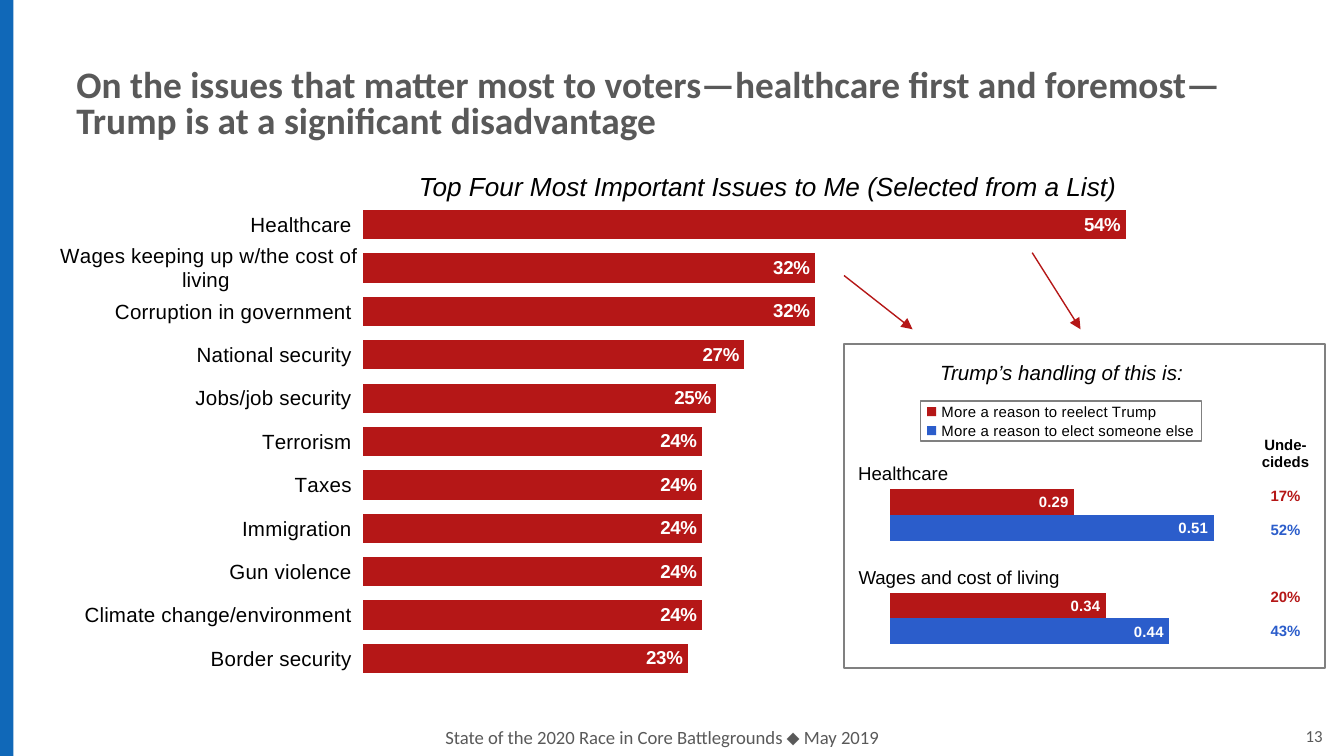
from lxml import etree
from pptx import Presentation
from pptx.chart.data import CategoryChartData as ChartData
from pptx.dml.color import RGBColor
from pptx.enum.chart import XL_CHART_TYPE as ChartType
from pptx.enum.chart import XL_LABEL_POSITION as LabelPosition
from pptx.enum.chart import XL_LEGEND_POSITION as LegendPosition
from pptx.enum.chart import XL_TICK_LABEL_POSITION as TickLabel
from pptx.enum.chart import XL_TICK_MARK as TickMark
from pptx.enum.shapes import MSO_CONNECTOR as Connector
from pptx.enum.shapes import MSO_SHAPE as Shape
from pptx.enum.text import MSO_ANCHOR as Anchor
from pptx.enum.text import PP_ALIGN as Align
from pptx.oxml import parse_xml
from pptx.oxml.ns import nsdecls, qn
from pptx.util import Inches, Pt

COLUMNS, ROWS, CELL = 100, 56.25, Inches(0.1)
COLORS = {
    "stripe": "1068B8", "heading": "595959", "text": "000000", "frame": "808080",
    "reelect": "B51717", "other": "2B5DCB", "label": "FFFFFF",
}
PLAIN_TABLE = "{2D5ABB26-0587-4C30-8999-92F81FD0307C}"

TITLE = ("On the issues that matter most to voters—healthcare first and foremost—"
         "Trump is at a significant disadvantage")
ISSUES = [
    ("Healthcare ", 0.54),
    ("Wages keeping up w/the cost of living ", 0.32),
    ("Corruption in government ", 0.32),
    ("National security ", 0.27),
    ("Jobs/job security ", 0.25),
    ("Terrorism ", 0.24),
    ("Taxes ", 0.24),
    ("Immigration ", 0.24),
    ("Gun violence ", 0.24),
    ("Climate change/environment ", 0.24),
    ("Border security ", 0.23),
]
HANDLING = [
    ("More a reason to elect someone else", [0.44, None, 0.51], "other"),
    ("More a reason to reelect Trump", [0.34, None, 0.29], "reelect"),
]
UNDECIDED = [
    ("Unde-\vcideds", "text"), ("17%", "reelect"), ("52%", "other"),
    ("", "text"), ("20%", "reelect"), ("43%", "other"),
]
TEXTS = [
    (TITLE, (4.7, 3.2, 90.7, 9.4), dict(
        size=20, font="Calibri", color="heading", bold=True, align=Align.LEFT,
        anchor=Anchor.MIDDLE, spacing=0.8, wrap=True)),
    ("State of the 2020 Race in Core Battlegrounds ⬥ May 2019", (16.5, 53.5, 65.5, 2.7),
     dict(size=10, font="Calibri", color="heading", wrap=True)),
    ("13", (93, 53.5, 6.4, 2.5),
     dict(size=9, font="Calibri", color="heading", align=Align.RIGHT, wrap=True)),
    ("Top Four Most Important Issues to Me (Selected from a List)",
     (30.1, 12.2, 54.1, 3.4), dict(size=14, italic=True)),
    ("Trump’s handling of this is:", (68.8, 26.3, 20.4, 2.9), dict(size=11, italic=True)),
    ("Healthcare", (62.8, 33.9, 8.8, 2.7), dict(size=10)),
    ("Wages and cost of living", (62.8, 41.6, 17.1, 2.7), dict(size=10)),
]
ARROWS = [(76.8, 18.8, 80.4, 24.5), (62.8, 20.5, 67.9, 24.5)]


def grid(*cells):
    return [round(cell * CELL) for cell in cells]


def rgb(name):
    return RGBColor.from_string(COLORS[name])


def style_font(font, size, color="text", bold=False, italic=False, name="Arial"):
    font.size, font.name, font.bold, font.italic = Pt(size), name, bold, italic
    font.color.rgb = rgb(color)


def write(frame, text, size=8, font="Arial", color="text", bold=False, italic=False,
          align=Align.CENTER, anchor=Anchor.TOP, spacing=None, wrap=False):
    frame.word_wrap = wrap
    frame.vertical_anchor = anchor
    paragraph = frame.paragraphs[0]
    paragraph.text = text
    paragraph.alignment = align
    if spacing:
        paragraph.line_spacing = spacing
    for run in paragraph.runs:
        style_font(run.font, size, color, bold, italic, font)
    paragraph._p.get_or_add_endParaRPr().set("sz", str(size * 100))


def set_layout(element, index, percents, target=""):
    for layout in element.findall(qn("c:layout")):
        element.remove(layout)
    settings = [("xMode", "edge"), ("yMode", "edge")]
    settings += [(key, percent / 100) for key, percent in zip("xywh", percents)]
    if target:
        settings.insert(0, ("layoutTarget", target))
    parts = "".join(f'<c:{key} val="{value}"/>' for key, value in settings)
    element.insert(index, parse_xml(
        f'<c:layout {nsdecls("c")}><c:manualLayout>{parts}</c:manualLayout></c:layout>'))


def add_bars(slide, area, categories, series, plot, maximum, gap, label_size, label_format):
    data = ChartData()
    data.categories = categories
    for name, values, color in series:
        data.add_series(name, values)
    chart = slide.shapes.add_chart(ChartType.BAR_CLUSTERED, *grid(*area), data).chart
    chart.has_title = chart.has_legend = False
    style_font(chart.font, 18)
    bars = chart.plots[0]
    bars.gap_width, bars.overlap, bars.vary_by_categories = gap, 0, False
    for item, (name, values, color) in zip(bars.series, series):
        item.format.fill.solid()
        item.format.fill.fore_color.rgb = rgb(color)
        labels = item.data_labels
        labels.show_value, labels.position = True, LabelPosition.INSIDE_END
        labels.number_format, labels.number_format_is_linked = label_format, False
        style_font(labels.font, label_size, "label", True)
    axis = chart.value_axis
    axis.minimum_scale, axis.maximum_scale = 0, maximum
    axis.has_major_gridlines = axis.visible = False
    set_layout(chart._chartSpace.chart.plotArea, 0, plot, "inner")
    return chart


def add_box(slide, area, fill=None, line=None):
    shape = slide.shapes.add_shape(Shape.RECTANGLE, *grid(*area))
    shape.shadow.inherit = False
    if fill:
        shape.fill.solid()
        shape.fill.fore_color.rgb = rgb(fill)
    else:
        shape.fill.background()
    if line:
        shape.line.color.rgb = rgb(line)
        shape.line.width = Pt(0.75)
    else:
        shape.line.fill.background()


def add_arrow(slide, ends):
    arrow = slide.shapes.add_connector(Connector.STRAIGHT, *grid(*ends))
    arrow.line.color.rgb = rgb("reelect")
    arrow.line.width = Pt(0.75)
    etree.SubElement(arrow.line._get_or_add_ln(), qn("a:tailEnd"), type="triangle")
    etree.SubElement(arrow._element.spPr, qn("a:effectLst"))


def add_undecided(slide):
    table = slide.shapes.add_table(
        len(UNDECIDED), 1, *grid(92.7, 31.9, 5.9, 16.1)).table
    table.first_row = table.horz_banding = False
    table._tbl.tblPr.find(qn("a:tableStyleId")).text = PLAIN_TABLE
    for index, (text, color) in enumerate(UNDECIDED):
        table.rows[index].height = grid(2.5 if index else 3.6)[0]
        cell = table.cell(index, 0)
        cell.fill.background()
        cell.margin_left = cell.margin_right = 0
        cell.margin_top = cell.margin_bottom = Inches(0.05)
        write(cell.text_frame, text, color=color, bold=True, wrap=True)
        cell.vertical_anchor = Anchor.BOTTOM if index else Anchor.MIDDLE


def main():
    presentation = Presentation()
    presentation.slide_width, presentation.slide_height = grid(COLUMNS, ROWS)
    slide = presentation.slides.add_slide(presentation.slide_layouts[6])
    add_box(slide, (0, 0, 1, ROWS), fill="stripe")

    names, shares = zip(*reversed(ISSUES))
    issues = add_bars(slide, (2.7, 14.4, 89.2, 37), names, [("Series 1", shares, "reelect")],
                      (27.25, 1.9, 70.7, 96), 0.6, 48, 10, "0%")
    axis = issues.category_axis
    axis.major_tick_mark = axis.minor_tick_mark = TickMark.NONE
    axis.tick_label_position = TickLabel.NEXT_TO_AXIS
    axis.format.line.fill.background()
    style_font(axis.tick_labels.font, 11)

    handling = add_bars(slide, (64, 28.5, 28.2, 20.6), ["1", "2", "3"], HANDLING,
                        (7.9, 38.2, 92.1, 56.3), 0.55, 0, 8, "General")
    handling.category_axis.visible = False
    handling.has_legend = True
    legend = handling.legend
    legend.position, legend.include_in_layout = LegendPosition.TOP, False
    style_font(legend.font, 8)
    set_layout(legend._element, 1, (16, 6.5, 74, 14.5))
    border = parse_xml(
        f'<c:spPr {nsdecls("c", "a")}><a:ln w="9525"><a:solidFill>'
        f'<a:srgbClr val="{COLORS["frame"]}"/></a:solidFill></a:ln></c:spPr>')
    legend._element.find(qn("c:txPr")).addprevious(border)

    for text, area, options in TEXTS:
        write(slide.shapes.add_textbox(*grid(*area)).text_frame, text, **options)
    add_box(slide, (62.8, 25.6, 35.8, 24.1), line="frame")
    for ends in ARROWS:
        add_arrow(slide, ends)
    add_undecided(slide)
    presentation.save("out.pptx")


if __name__ == "__main__":
    main()
